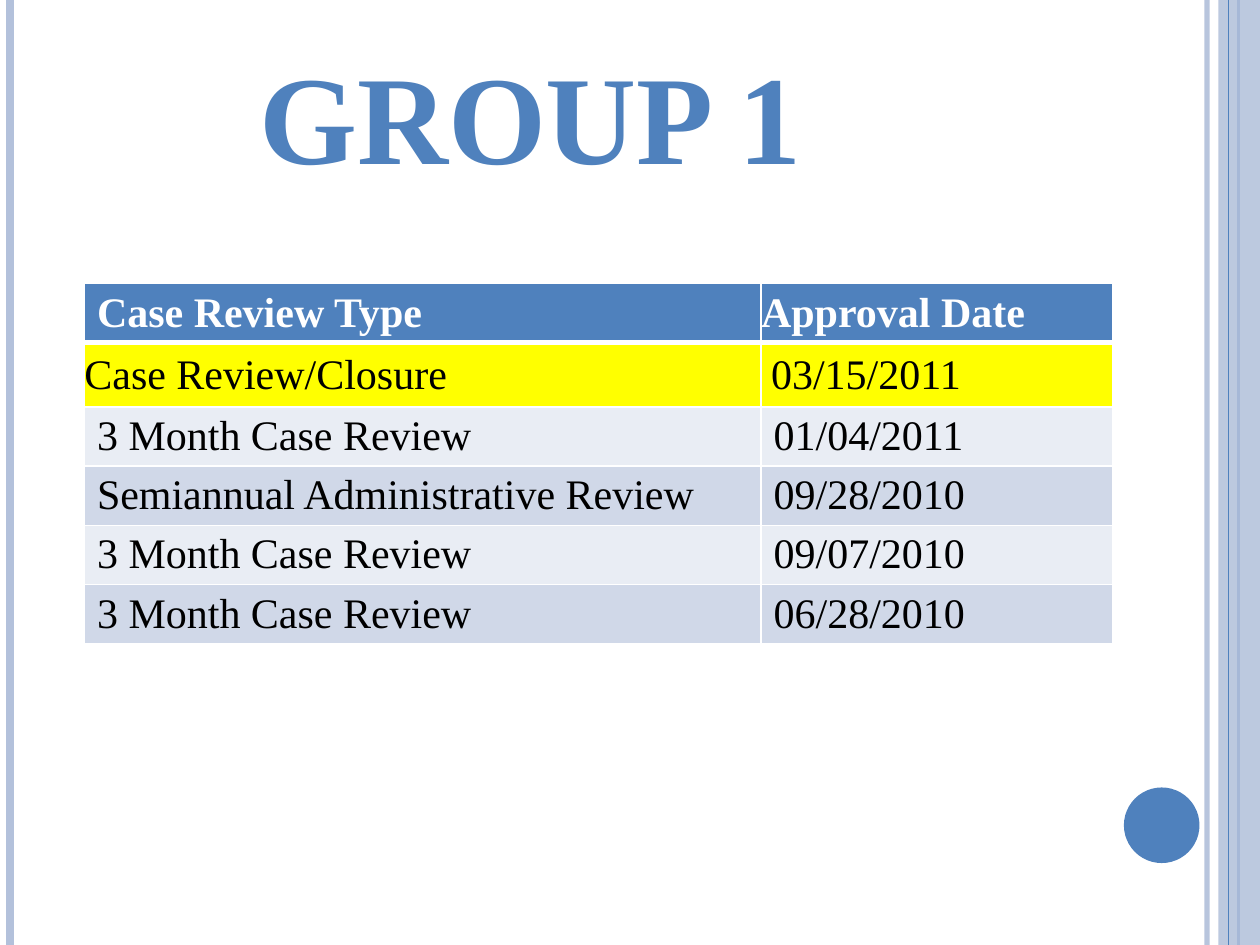
import dataclasses

import lxml.etree
import pptx
import pptx.dml.color
import pptx.enum.shapes
import pptx.enum.text
import pptx.oxml.ns
import pptx.util

Inches = pptx.util.Inches
Pt = pptx.util.Pt
qn = pptx.oxml.ns.qn
ANCHOR = pptx.enum.text.MSO_ANCHOR
ALIGN = pptx.enum.text.PP_ALIGN
SHAPE = pptx.enum.shapes.MSO_SHAPE


@dataclasses.dataclass(frozen=True)
class Theme:
    font: str = "Times New Roman"
    title_size: int = 72
    table_size: int = 24
    accent: str = "4F81BD"
    pale: str = "B3C1DB"
    white: str = "FFFFFF"
    black: str = "000000"
    highlight: str = "FFFF00"
    bands: tuple = ("D0D8E8", "E9EDF4")


def rgb(value):
    return pptx.dml.color.RGBColor.from_string(value)


def write(tf, text, font, size, color, bold=False, align=ALIGN.LEFT):
    p = tf.paragraphs[0]
    p.alignment = align
    r = p.add_run()
    r.text = text
    r.font.name = font
    r.font.size = Pt(size)
    r.font.bold = bold
    r.font.color.rgb = rgb(color)


def set_alpha(sp, percent):
    """Make the first solid colour of a shape or line partly transparent."""
    color = next(sp._element.spPr.iter(qn("a:srgbClr")))
    lxml.etree.SubElement(color, qn("a:alpha"), val=str(percent * 1000))


def set_borders(cell, color, widths):
    """Draw the cell edges; widths maps L, R, T and B, in that order, to points."""
    tcPr = cell._tc.get_or_add_tcPr()
    for i, (side, width) in enumerate(widths.items()):
        ln = lxml.etree.Element(qn(f"a:ln{side}"), w=str(Pt(width)))
        fill = lxml.etree.SubElement(ln, qn("a:solidFill"))
        lxml.etree.SubElement(fill, qn("a:srgbClr"), val=color)
        tcPr.insert(i, ln)


class SlideBuilder:
    def __init__(self, prs, theme):
        self.theme = theme
        self.s = prs.slides.add_slide(prs.slide_layouts[5])
        self.height = prs.slide_height

    def title(self, text, left, top, width, height):
        sp = self.s.shapes.title
        sp.left, sp.top = Inches(left), Inches(top)
        sp.width, sp.height = Inches(width), Inches(height)
        tf = sp.text_frame
        tf.auto_size = pptx.enum.text.MSO_AUTO_SIZE.NONE
        tf.vertical_anchor = ANCHOR.BOTTOM
        write(tf, text, self.theme.font, self.theme.title_size,
              self.theme.accent, bold=True, align=ALIGN.CENTER)

    def rule(self, x, color, width, alpha=100):
        """Draw a vertical line over the full slide height."""
        line = self.s.shapes.add_connector(
            pptx.enum.shapes.MSO_CONNECTOR.STRAIGHT,
            Inches(x), 0, Inches(x), self.height)
        line.line.color.rgb = rgb(color)
        line.line.width = Pt(width)
        lxml.etree.SubElement(line._element.spPr, qn("a:effectLst"))
        if alpha < 100:
            set_alpha(line, alpha)

    def shape(self, kind, left, top, width, height, color, alpha=100):
        sp = self.s.shapes.add_shape(
            kind, Inches(left), Inches(top), Inches(width), Inches(height))
        sp.shadow.inherit = False
        sp.fill.solid()
        sp.fill.fore_color.rgb = rgb(color)
        sp.line.fill.background()
        if alpha < 100:
            set_alpha(sp, alpha)

    def cell(self, cell, text, fill, color, bold=False, inset=None, bottom=1):
        """Fill one cell; an inset removes the other margins and centres the text."""
        cell.fill.solid()
        cell.fill.fore_color.rgb = rgb(fill)
        set_borders(cell, self.theme.white, {"L": 1, "R": 1, "T": 1, "B": bottom})
        if inset is not None:
            cell.margin_left = Inches(inset)
            cell.margin_right = cell.margin_top = cell.margin_bottom = 0
            cell.vertical_anchor = ANCHOR.MIDDLE
        write(cell.text_frame, text, self.theme.font, self.theme.table_size,
              color, bold=bold)

    def table(self, rows, left, top, col_widths, row_heights, insets):
        """The first row is the header and the second one is highlighted."""
        th = self.theme
        table = self.s.shapes.add_table(
            len(rows), len(col_widths), Inches(left), Inches(top),
            Inches(sum(col_widths)), Inches(sum(row_heights))).table
        for column, width in zip(table.columns, col_widths):
            column.width = Inches(width)
        for i, (row, height) in enumerate(zip(rows, row_heights)):
            table.rows[i].height = Inches(height)
            header = i == 0
            fill = {0: th.accent, 1: th.highlight}.get(i, th.bands[(i + 1) % 2])
            for j, text in enumerate(row):
                self.cell(table.cell(i, j), text, fill,
                          th.white if header else th.black, bold=header,
                          inset=insets.get((i, j)), bottom=3 if header else 1)


def main():
    theme = Theme()
    prs = pptx.Presentation()
    prs.slide_width, prs.slide_height = Inches(10), Inches(7.5)
    slide = SlideBuilder(prs, theme)

    slide.rule(9.58, theme.pale, 3, alpha=93)
    slide.rule(0.08, theme.pale, 4.5)
    slide.rule(9.83, theme.accent, 1.5)
    slide.shape(SHAPE.RECTANGLE, 9.67, 0, 0.33, 7.5, theme.pale, alpha=87)
    slide.rule(9.75, theme.accent, 0.75)
    slide.shape(SHAPE.OVAL, 8.92, 6.25, 0.6, 0.6, theme.accent)

    reviews = [
        ("Case Review Type", "Approval Date"),
        ("Case Review/Closure", "03/15/2011"),
        ("3 Month Case Review", "01/04/2011"),
        ("Semiannual Administrative Review", "09/28/2010"),
        ("3 Month Case Review", "09/07/2010"),
        ("3 Month Case Review", "06/28/2010"),
    ]
    slide.table(reviews, 0.67, 2.25, col_widths=(5.37, 2.79),
                row_heights=[0.47, 0.51] + [0.47] * 4,
                insets={(0, 1): 0, (1, 0): 0, (1, 1): 0.08})
    slide.title("GROUP 1", 0.92, 0.25, 6.58, 1.31)

    prs.save("out.pptx")


if __name__ == "__main__":
    main()
